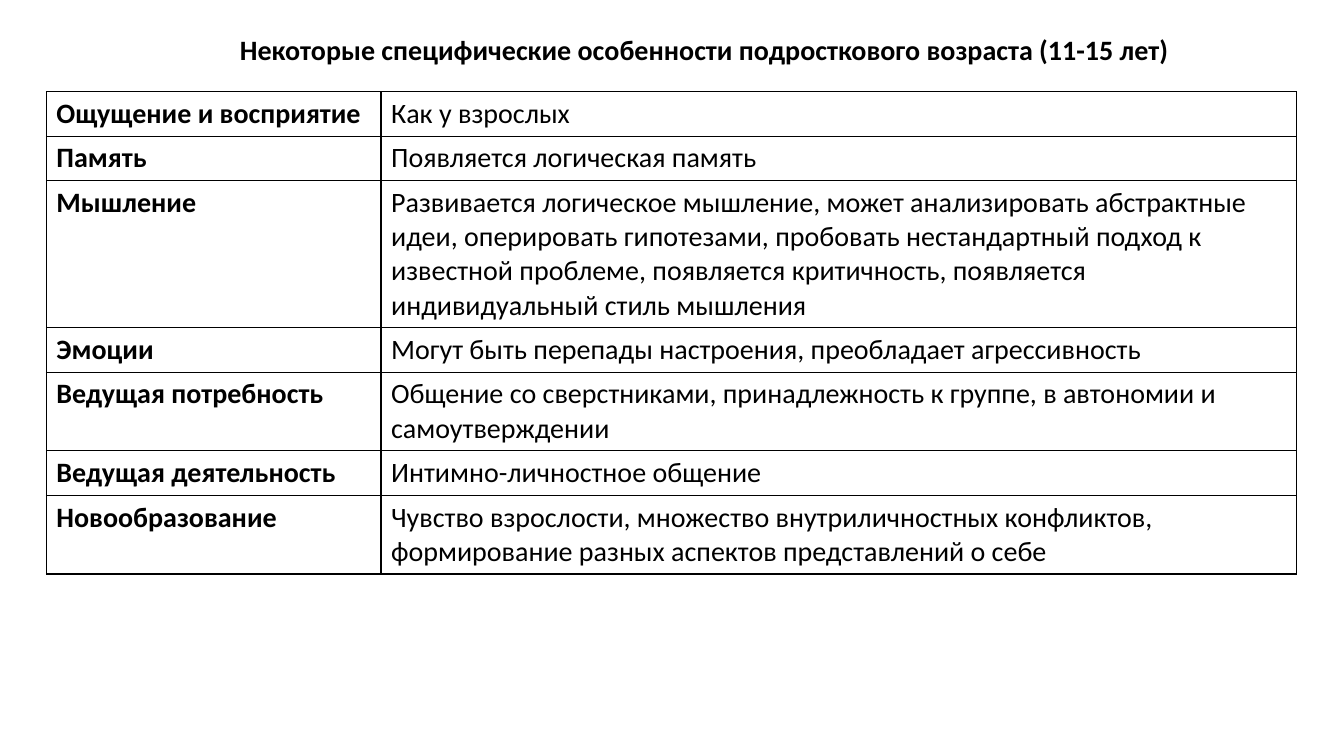
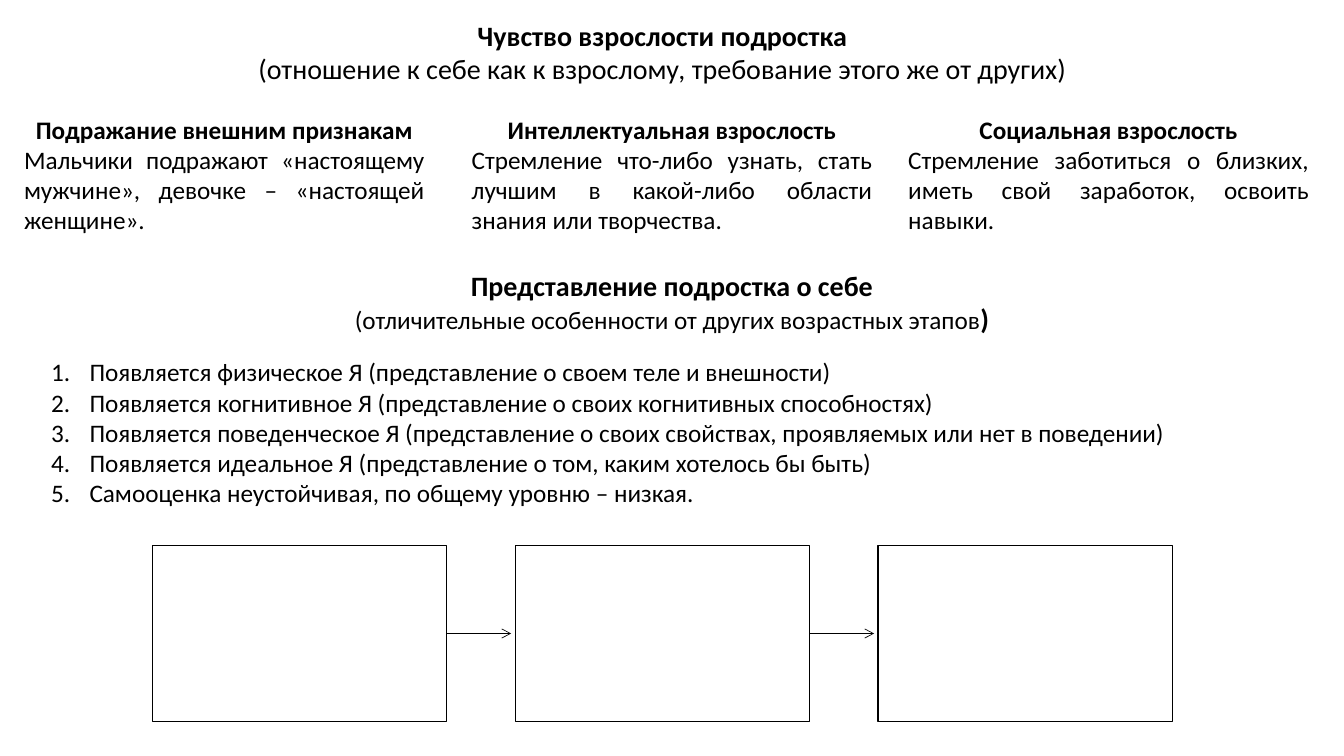
from lxml import etree
from pptx import Presentation
from pptx.dml.color import RGBColor
from pptx.enum.shapes import MSO_CONNECTOR, MSO_SHAPE
from pptx.enum.text import MSO_ANCHOR, MSO_AUTO_SIZE, PP_ALIGN
from pptx.oxml.ns import qn
from pptx.util import Inches, Pt

FONT, BLACK, WHITE = "Calibri", "000000", "FFFFFF"
LARGE, SMALL = 20, 18

TRAITS = [
    ("Ощущение и восприятие", "Как у взрослых", PP_ALIGN.JUSTIFY),
    ("Память", "Появляется логическая память", PP_ALIGN.JUSTIFY),
    ("Мышление", "Развивается логическое мышление, может анализировать абстрактные идеи, "
     "оперировать гипотезами, пробовать нестандартный подход к известной проблеме, "
     "появляется критичность, появляется индивидуальный стиль мышления", PP_ALIGN.LEFT),
    ("Эмоции", "Могут быть перепады настроения, преобладает агрессивность", PP_ALIGN.LEFT),
    ("Ведущая потребность", "Общение со сверстниками, принадлежность к группе, "
     "в автономии и самоутверждении", PP_ALIGN.LEFT),
    ("Ведущая деятельность", "Интимно-личностное общение", PP_ALIGN.LEFT),
    ("Новообразование", "Чувство взрослости, множество внутриличностных конфликтов, "
     "формирование разных аспектов представлений о себе", PP_ALIGN.LEFT),
]
ADULTHOOD = [
    (0.14, "Подражание внешним признакам",
     "Мальчики подражают «настоящему мужчине», девочке – «настоящей женщине»."),
    (4.58, "Интеллектуальная взрослость",
     "Стремление что-либо узнать, стать лучшим в какой-либо области знания или творчества."),
    (8.91, "Социальная взрослость",
     "Стремление заботиться о близких, иметь свой заработок, освоить навыки."),
]
SELF_IMAGE = [
    "Появляется физическое Я (представление о своем теле и внешности)",
    "Появляется когнитивное Я (представление о своих когнитивных способностях)",
    "Появляется поведенческое Я (представление о своих свойствах, проявляемых или нет в поведении)",
    "Появляется идеальное Я (представление о том, каким хотелось бы быть)",
    "Самооценка неустойчивая, по общему уровню – низкая.",
]


def rgb(value):
    """Turn a hex string into a colour."""
    return RGBColor.from_string(value)


def style_font(font, size, bold=False):
    """Apply the deck's typeface and colour."""
    font.name, font.size, font.bold = FONT, Pt(size), bold
    font.color.rgb = rgb(BLACK)


def write(tf, lines):
    """Fill a text frame with (text, size, bold, alignment) lines."""
    for i, (text, size, bold, align) in enumerate(lines):
        p = tf.paragraphs[0] if i == 0 else tf.add_paragraph()
        p.text, p.alignment = text, align
        style_font(p.font, size, bold)


def place(sp, box, lines, wrap=True):
    """Position a text shape and write its lines from the top."""
    sp.left, sp.top, sp.width, sp.height = map(Inches, box)
    tf = sp.text_frame
    tf.word_wrap, tf.auto_size = wrap, MSO_AUTO_SIZE.NONE
    tf.vertical_anchor = MSO_ANCHOR.TOP
    write(tf, lines)
    return tf


def add_text(s, box, lines):
    """Add a wrapping text box."""
    return place(s.shapes.add_textbox(*map(Inches, box)), box, lines)


def add_titled_slide(prs, box, lines):
    """Add a title-only slide and format its title."""
    s = prs.slides.add_slide(prs.slide_layouts[5])
    place(s.shapes.title, box, lines, wrap=False)
    return s


def style_cell(cell):
    """Give a cell no fill and thin black borders."""
    tc_pr = cell._tc.get_or_add_tcPr()
    for side in ("lnL", "lnR", "lnT", "lnB"):
        ln = etree.SubElement(tc_pr, qn(f"a:{side}"), w=str(Pt(1)))
        fill = etree.SubElement(ln, qn("a:solidFill"))
        etree.SubElement(fill, qn("a:srgbClr"), val=BLACK)
    cell.fill.background()


def add_traits_table(s, left, top):
    """Add the two-column table of age traits."""
    widths, row_height = (3.32, 9.08), 0.41
    box = (left, top, sum(widths), row_height * len(TRAITS))
    table = s.shapes.add_table(len(TRAITS), len(widths), *map(Inches, box)).table
    table.first_row = table.horz_banding = False
    for column, width in zip(table.columns, widths):
        column.width = Inches(width)
    for row, (name, text, align) in zip(table.rows, TRAITS):
        for cell in row.cells:
            style_cell(cell)
        write(row.cells[0].text_frame, [(name, LARGE, True, PP_ALIGN.LEFT)])
        write(row.cells[1].text_frame, [(text, LARGE, False, align)])


def add_numbered_list(s, box, items):
    """Add a numbered list with a hanging indent."""
    tf = add_text(s, box, [(item, SMALL, False, PP_ALIGN.LEFT) for item in items])
    for p in tf.paragraphs:
        p_pr = p._p.get_or_add_pPr()
        p_pr.set("marL", str(Inches(0.38)))
        p_pr.set("indent", str(-Inches(0.38)))
        p_pr.insert(0, p_pr.makeelement(qn("a:buAutoNum"), {"type": "arabicPeriod"}))


def add_arrow(s, x1, x2, y):
    """Add a thin horizontal arrow pointing right."""
    cn = s.shapes.add_connector(MSO_CONNECTOR.STRAIGHT, *map(Inches, (x1, y, x2, y)))
    cn.line.color.rgb, cn.line.width = rgb(BLACK), Pt(0.5)
    etree.SubElement(cn.line._get_or_add_ln(), qn("a:tailEnd"), type="arrow")
    etree.SubElement(cn._element.spPr, qn("a:effectLst"))


def add_chain(s, left, top, count=3):
    """Add a row of empty boxes joined by arrows."""
    width, height, pitch = 2.92, 1.75, 3.6
    for i in range(count):
        x = left + i * pitch
        sp = s.shapes.add_shape(MSO_SHAPE.RECTANGLE, *map(Inches, (x, top, width, height)))
        sp.shadow.inherit = False
        sp.fill.solid()
        sp.fill.fore_color.rgb = rgb(WHITE)
        sp.line.color.rgb, sp.line.width = rgb(BLACK), Pt(1)
        if i < count - 1:
            add_arrow(s, x + width, x + pitch - 0.04, top + height / 2)


def build_traits_slide(prs):
    """Build the slide with the table of traits."""
    title = "Некоторые специфические особенности подросткового возраста (11-15 лет)"
    s = add_titled_slide(prs, (2.28, 0.27, 9.48, 0.44), [(title, LARGE, True, PP_ALIGN.LEFT)])
    add_traits_table(s, 0.46, 0.91)


def build_adulthood_slide(prs):
    """Build the slide on the sense of adulthood and self-image."""
    center = PP_ALIGN.CENTER
    s = add_titled_slide(prs, (2.43, 0.13, 8.28, 0.77), [
        ("Чувство взрослости подростка", LARGE, True, center),
        ("(отношение к себе как к взрослому, требование этого же от других)", LARGE, False, center),
    ])
    for left, name, text in ADULTHOOD:
        add_text(s, (left, 1.08, 4.17, 1.31), [
            (name, SMALL, True, center), (text, SMALL, False, PP_ALIGN.JUSTIFY)])
    tf = add_text(s, (3.38, 2.61, 6.57, 0.77), [
        ("Представление подростка о себе", LARGE, True, center),
        ("(отличительные особенности от других возрастных этапов", SMALL, False, center),
    ])
    r = tf.paragraphs[1].add_run()
    r.text = ")"
    style_font(r.font, LARGE, True)
    add_numbered_list(s, (0.41, 3.49, 12.57, 1.62), SELF_IMAGE)
    add_chain(s, 1.51, 5.41)


def main():
    """Build and save the presentation."""
    prs = Presentation()
    prs.slide_width, prs.slide_height = Inches(13.33), Inches(7.5)
    build_traits_slide(prs)
    build_adulthood_slide(prs)
    prs.save("out.pptx")


if __name__ == "__main__":
    main()
